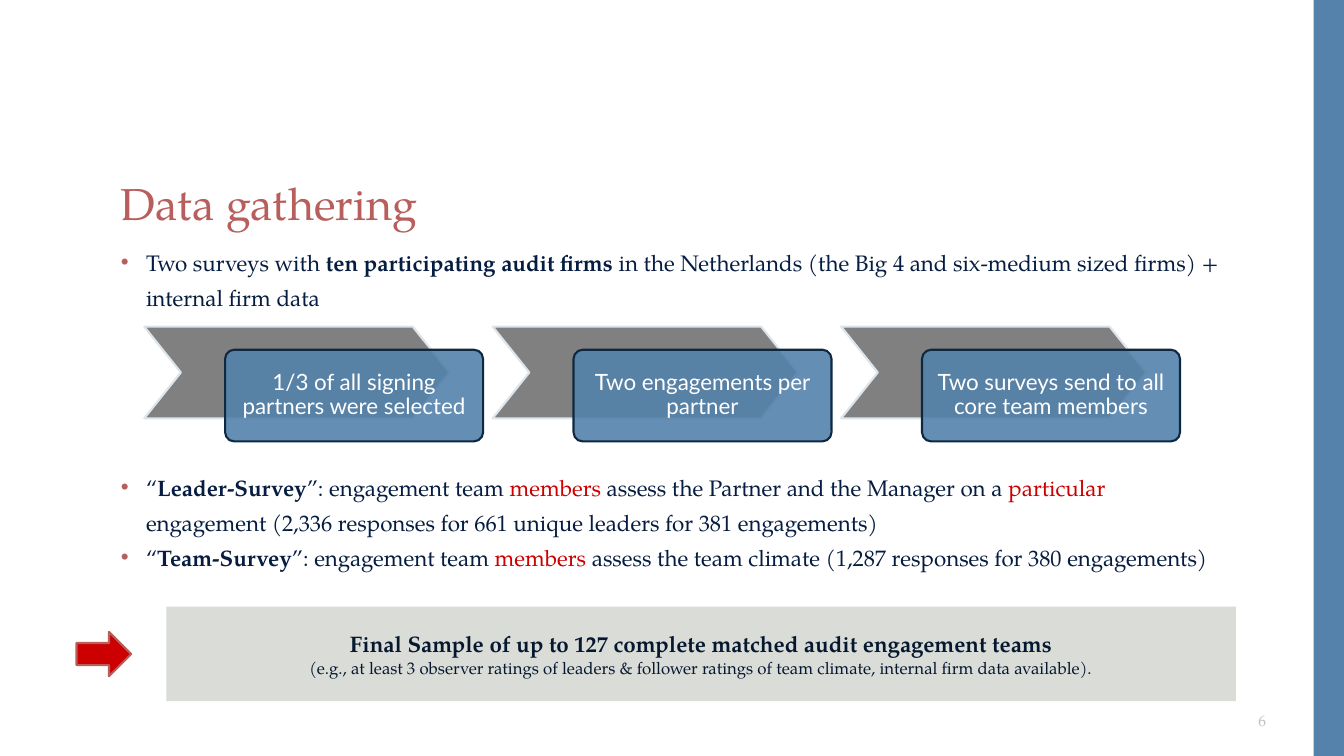
import pptx
import pptx.dml.color
import pptx.enum.shapes
import pptx.enum.text
import pptx.oxml
import pptx.oxml.ns
import pptx.util
from lxml import etree

Pt = pptx.util.Pt
RGB = pptx.dml.color.RGBColor.from_string
SHAPE = pptx.enum.shapes.MSO_SHAPE
ALIGN = pptx.enum.text.PP_ALIGN
MIDDLE = pptx.enum.text.MSO_ANCHOR.MIDDLE
qn = pptx.oxml.ns.qn

SERIF, SANS = "TeX Gyre Pagella", "Lato"
COLORS = {
    "blue": "5482AB", "rose": "B85E5C", "navy": "061D41", "red": "CC0000",
    "gray": "808080", "pale": "DCE5EB", "dark": "0E2841", "panel": "DADCD7",
    "ink": "061830", "number": "BFBFBF", "white": "FFFFFF",
}

presentation = pptx.Presentation()
presentation.slide_width, presentation.slide_height = Pt(960), Pt(540)
slide = presentation.slides.add_slide(presentation.slide_layouts[6])


def add_shape(kind, left, top, width, height, fill, line=None):
    shape = slide.shapes.add_shape(kind, Pt(left), Pt(top), Pt(width), Pt(height))
    shape.shadow.inherit = False
    shape.fill.solid()
    shape.fill.fore_color.rgb = RGB(COLORS[fill])
    if line:
        shape.line.color.rgb = RGB(COLORS[line])
        shape.line.width = Pt(1.5)
    else:
        shape.line.fill.background()
    return shape


def set_font(paragraph, name, size, color, bold=False):
    paragraph.font.name = name
    paragraph.font.size = Pt(size)
    paragraph.font.bold = bold
    paragraph.font.color.rgb = RGB(COLORS[color])


add_shape(SHAPE.RECTANGLE, 938.4, 0, 21.6, 540, "blue")

title = slide.shapes.add_textbox(Pt(79.2), Pt(126), Pt(805), Pt(42))
title.text_frame.word_wrap = True
paragraph = title.text_frame.paragraphs[0]
paragraph.text = "Data gathering"
paragraph.line_spacing = 0.9
set_font(paragraph, SERIF, 32, "rose")

# Bullet lists: (top, height, bullets), each bullet made of (text, style) runs
bullet_lists = [
    (168.5, 60, [
        [("Two surveys with ", None), ("ten participating audit firms", "bold"),
         (" in the Netherlands (the Big 4 and six-medium sized firms) + internal firm data", None)],
    ]),
    (329.2, 85, [
        [("“", None), ("Leader-Survey", "bold"), ("”: engagement team ", None), ("members ", "red"),
         ("assess the Partner and the Manager on a ", None), ("particular", "red"),
         (" engagement (2,336 responses for 661 unique leaders for 381 engagements)", None)],
        [("“", None), ("Team-Survey", "bold"), ("”: engagement team ", None), ("members ", "red"),
         ("assess the team climate (1,287 responses for 380 engagements)", None)],
    ]),
]
for top, height, bullets in bullet_lists:
    box = slide.shapes.add_textbox(Pt(79.2), Pt(top), Pt(805), Pt(height))
    frame = box.text_frame
    frame.word_wrap = True
    for index, runs in enumerate(bullets):
        paragraph = frame.add_paragraph() if index else frame.paragraphs[0]
        paragraph.line_spacing = 1.3
        properties = paragraph._p.get_or_add_pPr()
        properties.set("marL", str(Pt(18)))
        properties.set("indent", str(Pt(-18)))
        bullet_color = etree.SubElement(properties, qn("a:buClr"))
        etree.SubElement(bullet_color, qn("a:srgbClr"), val=COLORS["rose"])
        etree.SubElement(properties, qn("a:buFont"), typeface="Arial")
        etree.SubElement(properties, qn("a:buChar"), char="•")
        set_font(paragraph, SERIF, 16, "navy")
        for text, style in runs:
            run = paragraph.add_run()
            run.text = text
            if style == "bold":
                run.font.bold = True
            elif style == "red":
                run.font.color.rgb = RGB(COLORS["red"])

steps = [
    "1/3 of all signing partners were selected",
    "Two engagements per partner",
    "Two surveys send to all core team members",
]
for index, step in enumerate(steps):
    left = 103 + 248.9 * index
    chevron = add_shape(SHAPE.CHEVRON, left, 233.3, 218, 65.5, "gray", "pale")
    chevron.adjustments[0] = 0.4
    card = add_shape(SHAPE.ROUNDED_RECTANGLE, left + 57.8, 249.8, 184.3, 65.5, "blue", "dark")
    card.adjustments[0] = 0.1
    fill_color = card.fill._xPr.find(qn("a:solidFill"))[0]
    etree.SubElement(fill_color, qn("a:alpha"), val="90000")
    frame = card.text_frame
    frame.word_wrap = True
    frame.vertical_anchor = MIDDLE
    frame.margin_left = frame.margin_right = Pt(8.8)
    paragraph = frame.paragraphs[0]
    paragraph.text = step
    paragraph.alignment = ALIGN.CENTER
    paragraph.line_spacing = 0.9
    set_font(paragraph, SANS, 16, "white")

panel = add_shape(SHAPE.RECTANGLE, 118.8, 433.4, 764, 67.5, "panel")
frame = panel.text_frame
frame.word_wrap = True
frame.vertical_anchor = MIDDLE
sample_lines = [
    ("Final Sample of up to 127 complete matched audit engagement teams", 16, True),
    ("(e.g., at least 3 observer ratings of leaders & follower ratings of team climate, "
     "internal firm data available).", 12, False),
]
for index, (text, size, bold) in enumerate(sample_lines):
    paragraph = frame.add_paragraph() if index else frame.paragraphs[0]
    paragraph.text = text
    paragraph.alignment = ALIGN.CENTER
    set_font(paragraph, SERIF, size, "ink", bold)

add_shape(SHAPE.RIGHT_ARROW, 54.7, 451.4, 39, 31.7, "red", "rose")

page_number = slide.shapes.add_textbox(Pt(861.8), Pt(500.4), Pt(49.7), Pt(28.8))
page_number.text_frame.word_wrap = True
page_number.text_frame.vertical_anchor = MIDDLE
paragraph = page_number.text_frame.paragraphs[0]
paragraph.text = "6"
paragraph.alignment = ALIGN.RIGHT
set_font(paragraph, SERIF, 11, "number")

presentation.save("out.pptx")
